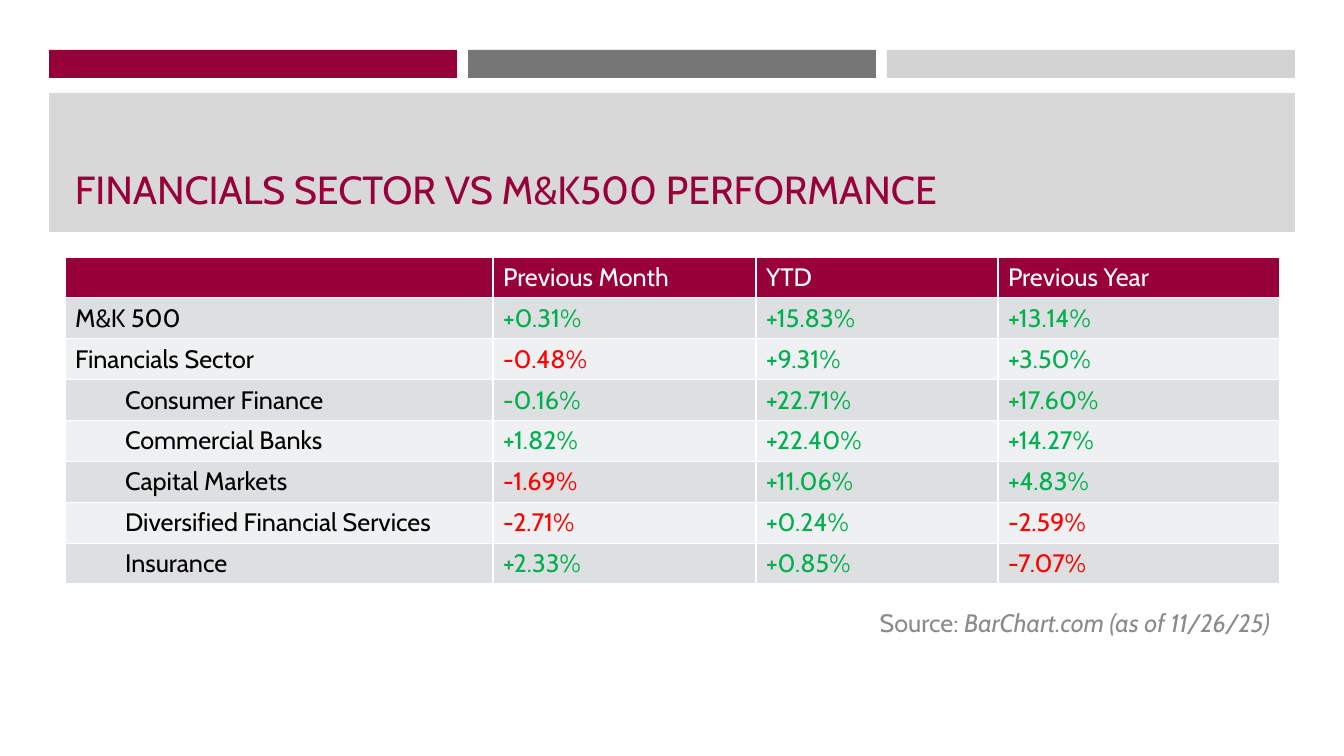
import pptx
import pptx.util
import pptx.dml.color
import pptx.enum.shapes
import pptx.enum.text
import pptx.oxml

# Content
TITLE = "FINANCIALS SECTOR VS M&K500 PERFORMANCE"
SOURCE = [("Source: ", False), ("BarChart.com (as of 11/26/25)", True)]
HEAD = ["", "Previous Month", "YTD", "Previous Year"]
# Level, name, values
ROWS = [
    (0, "M&K 500", "+0.31%", "+15.83%", "+13.14%"),
    (0, "Financials Sector", "-0.48%", "+9.31%", "+3.50%"),
    (1, "Consumer Finance", "-0.16%", "+22.71%", "+17.60%"),
    (1, "Commercial Banks", "+1.82%", "+22.40%", "+14.27%"),
    (1, "Capital Markets", "-1.69%", "+11.06%", "+4.83%"),
    (1, "Diversified Financial Services", "-2.71%", "+0.24%", "-2.59%"),
    (1, "Insurance", "+2.33%", "+0.85%", "-7.07%"),
]
GREEN_LOSS = {"-0.16%"}  # loss shown in green
COLORS = {
    "wine": "980039", "gray": "767676", "light": "D3D3D3", "panel": "D8D8D8",
    "odd": "DDDFE1", "even": "EFF0F1", "white": "FFFFFF", "black": "000000",
    "gain": "00B050", "loss": "FF0000", "note": "8B8B8B",
}
FONT = "Cabin"

# Layout in px
SCALE = 914400 / 100.8
LEFT, WIDTH = 49, 1246
BAR, GAP = 408, 11
COLS = [428, 263, 242, 282]
TABLE_X, TABLE_Y, TABLE_H = 65, 257, 327
INDENT = 50


def px(num):
    return pptx.util.Emu(round(num * SCALE))


def rgb(name):
    return pptx.dml.color.RGBColor.from_string(COLORS[name])


def style(run, size, color, slant=False):
    run.font.name = FONT
    run.font.size = pptx.util.Pt(size)
    run.font.color.rgb = rgb(color)
    run.font.bold = False
    run.font.italic = slant


def add_rect(slide, x, y, w, h, color):
    rect = slide.shapes.add_shape(
        pptx.enum.shapes.MSO_SHAPE.RECTANGLE, px(x), px(y), px(w), px(h))
    rect.shadow.inherit = False
    rect.fill.solid()
    rect.fill.fore_color.rgb = rgb(color)
    rect.line.fill.background()


def add_text(slide, x, y, w, h):
    frame = slide.shapes.add_textbox(px(x), px(y), px(w), px(h)).text_frame
    frame.word_wrap = True
    return frame


def set_edges(cell):
    props = cell._tc.get_or_add_tcPr()
    for at, side in enumerate(("lnL", "lnR", "lnT", "lnB")):
        edge = pptx.oxml.parse_xml(
            f'<a:{side} xmlns:a="http://schemas.openxmlformats.org/drawingml/2006/main"'
            f' w="12700"><a:solidFill><a:srgbClr val="{COLORS["white"]}"/>'
            f'</a:solidFill></a:{side}>')
        props.insert(at, edge)


def fill_cell(cell, text, back, color, level=0):
    cell.fill.solid()
    cell.fill.fore_color.rgb = rgb(back)
    set_edges(cell)
    para = cell.text_frame.paragraphs[0]
    para.text = text
    if level:
        para.level = level
        props = para._p.get_or_add_pPr()
        props.set("marL", str(px(INDENT * level)))
        props.set("indent", "0")
    para.font.size = pptx.util.Pt(18)
    for run in para.runs:
        style(run, 18, color)


def tone(value):
    return "loss" if value[0] == "-" and value not in GREEN_LOSS else "gain"


def add_grid(slide):
    count = len(ROWS) + 1
    grid = slide.shapes.add_table(
        count, len(COLS), px(TABLE_X), px(TABLE_Y), px(sum(COLS)), px(TABLE_H)).table
    for col, width in zip(grid.columns, COLS):
        col.width = px(width)
    for row in grid.rows:
        row.height = px(TABLE_H / count)
    for c, text in enumerate(HEAD):
        fill_cell(grid.cell(0, c), text, "wine", "white")
    for r, (level, name, *values) in enumerate(ROWS, 1):
        back = "odd" if r % 2 else "even"
        fill_cell(grid.cell(r, 0), name, back, "black", level)
        for c, value in enumerate(values, 1):
            fill_cell(grid.cell(r, c), value, back, tone(value))


def main():
    deck = pptx.Presentation()
    deck.slide_width, deck.slide_height = px(1344), px(756)
    slide = deck.slides.add_slide(deck.slide_layouts[6])

    # Top bars and title panel
    for i, color in enumerate(("wine", "gray", "light")):
        add_rect(slide, LEFT + i * (BAR + GAP), 50, BAR, 28, color)
    add_rect(slide, LEFT, 93, WIDTH, 139, "panel")

    # Table
    add_grid(slide)

    # Title
    frame = add_text(slide, TABLE_X, 108, sum(COLS), 109)
    frame.vertical_anchor = pptx.enum.text.MSO_ANCHOR.BOTTOM
    frame.text = TITLE
    style(frame.paragraphs[0].runs[0], 28, "wine")

    # Source note
    para = add_text(slide, 794, 602, 486, 40).paragraphs[0]
    para.alignment = pptx.enum.text.PP_ALIGN.RIGHT
    for text, slant in SOURCE:
        run = para.add_run()
        run.text = text
        style(run, 18, "note", slant)

    deck.save("out.pptx")


if __name__ == "__main__":
    main()
